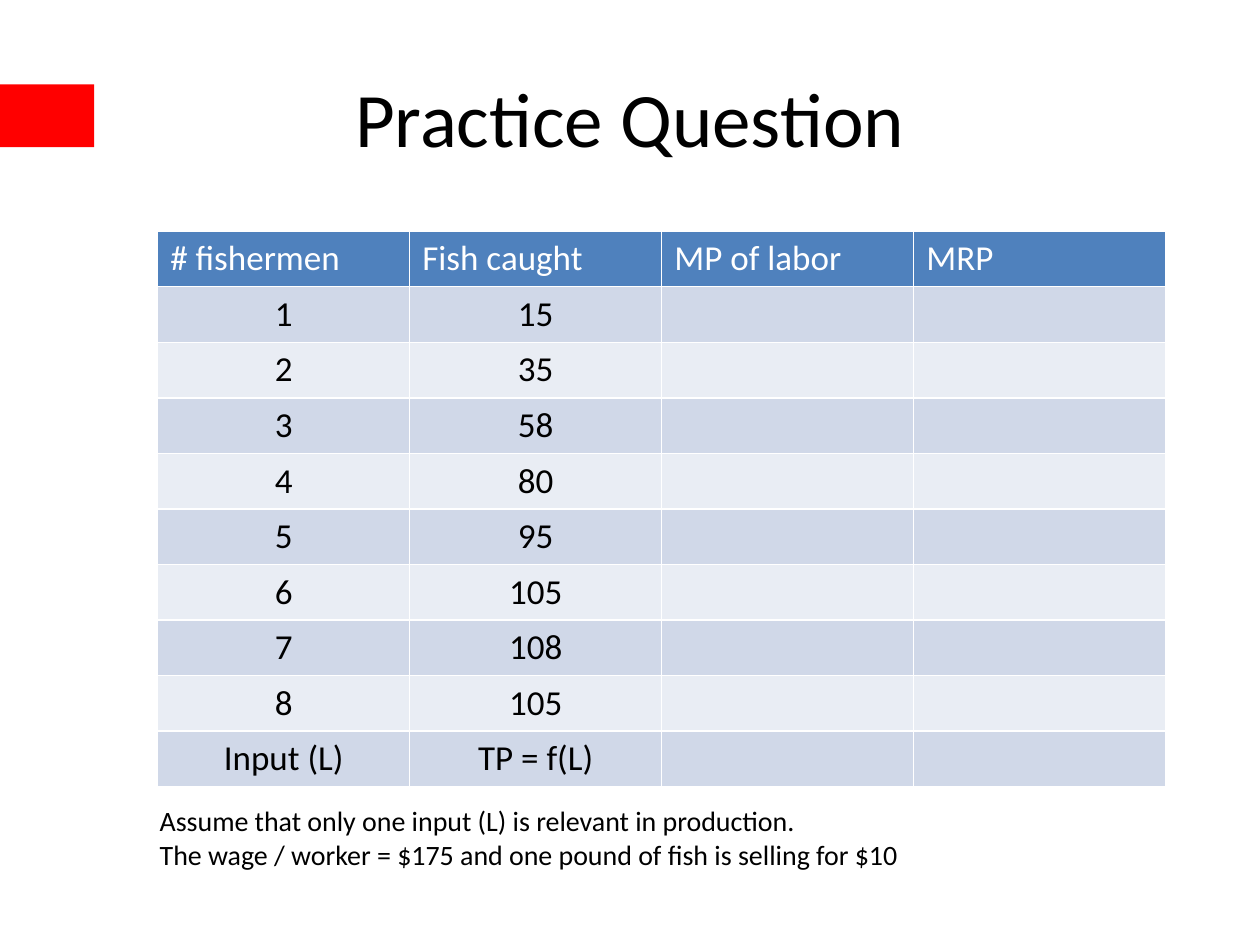
from dataclasses import dataclass

from pptx import Presentation
from pptx import util as u
from pptx.dml.color import RGBColor
from pptx.enum import shapes, text


@dataclass(frozen=True)
class Theme:
    font: str = "Calibri"
    title_size: int = 44
    table_size: int = 20
    note_size: int = 16
    black: str = "000000"
    white: str = "FFFFFF"
    accent: str = "FF0000"
    header: str = "4F81BD"
    bands: tuple = ("D0D8E8", "E9EDF4")


theme = Theme()


def format_paragraph(paragraph, size, color, alignment):
    paragraph.alignment = alignment
    paragraph.font.size = u.Pt(size)
    for run in paragraph.runs:
        run.font.name = theme.font
        run.font.size = u.Pt(size)
        run.font.bold = False
        run.font.color.rgb = RGBColor.from_string(color)


presentation = Presentation()
presentation.slide_width = u.Cm(25.4)
presentation.slide_height = u.Cm(19.05)
slide = presentation.slides.add_slide(presentation.slide_layouts[5])

# Red marker at the left edge
marker = slide.shapes.add_shape(
    shapes.MSO_SHAPE.RECTANGLE, u.Cm(0), u.Cm(1.7), u.Cm(1.9), u.Cm(1.27))
marker.shadow.inherit = False
marker.fill.solid()
marker.fill.fore_color.rgb = RGBColor.from_string(theme.accent)
marker.line.fill.background()

# Title
title = slide.shapes.title
title.left, title.top = u.Cm(1.27), u.Cm(0.76)
title.width, title.height = u.Cm(22.86), u.Cm(3.18)
title.text_frame.text = "Practice Question"
title.text_frame.vertical_anchor = text.MSO_ANCHOR.MIDDLE
format_paragraph(title.text_frame.paragraphs[0], theme.title_size, theme.black,
                 text.PP_ALIGN.CENTER)

# Production table, with the last two columns left for the answers
headings = ["# fishermen", "Fish caught", "MP of labor", "MRP"]
fish_caught = [15, 35, 58, 80, 95, 105, 108, 105]
rows = [headings]
rows += [[str(workers), str(fish), "", ""]
         for workers, fish in enumerate(fish_caught, start=1)]
rows.append(["Input (L)", "TP = f(L)", "", ""])

row_height = u.Cm(1.12)
table = slide.shapes.add_table(
    len(rows), len(headings), u.Cm(3.18), u.Cm(4.66),
    u.Cm(20.32), row_height * len(rows)).table
for row_index, values in enumerate(rows):
    table.rows[row_index].height = row_height
    if row_index == 0:
        fill, color, alignment = theme.header, theme.white, text.PP_ALIGN.LEFT
    else:
        fill = theme.bands[(row_index - 1) % 2]
        color, alignment = theme.black, text.PP_ALIGN.CENTER
    for column_index, value in enumerate(values):
        cell = table.cell(row_index, column_index)
        cell.fill.solid()
        cell.fill.fore_color.rgb = RGBColor.from_string(fill)
        cell.text_frame.text = value
        format_paragraph(cell.text_frame.paragraphs[0], theme.table_size,
                         color, alignment)

# Assumptions below the table
note = slide.shapes.add_textbox(u.Cm(2.97), u.Cm(16.08), u.Cm(18.64), u.Cm(1.5))
note.text_frame.word_wrap = True
note.text_frame.auto_size = text.MSO_AUTO_SIZE.SHAPE_TO_FIT_TEXT
note.text_frame.text = (
    "Assume that only one input (L) is relevant in production.\n"
    "The wage / worker = $175 and one pound of fish is selling for $10")
for paragraph in note.text_frame.paragraphs:
    format_paragraph(paragraph, theme.note_size, theme.black, text.PP_ALIGN.LEFT)

presentation.save("out.pptx")
